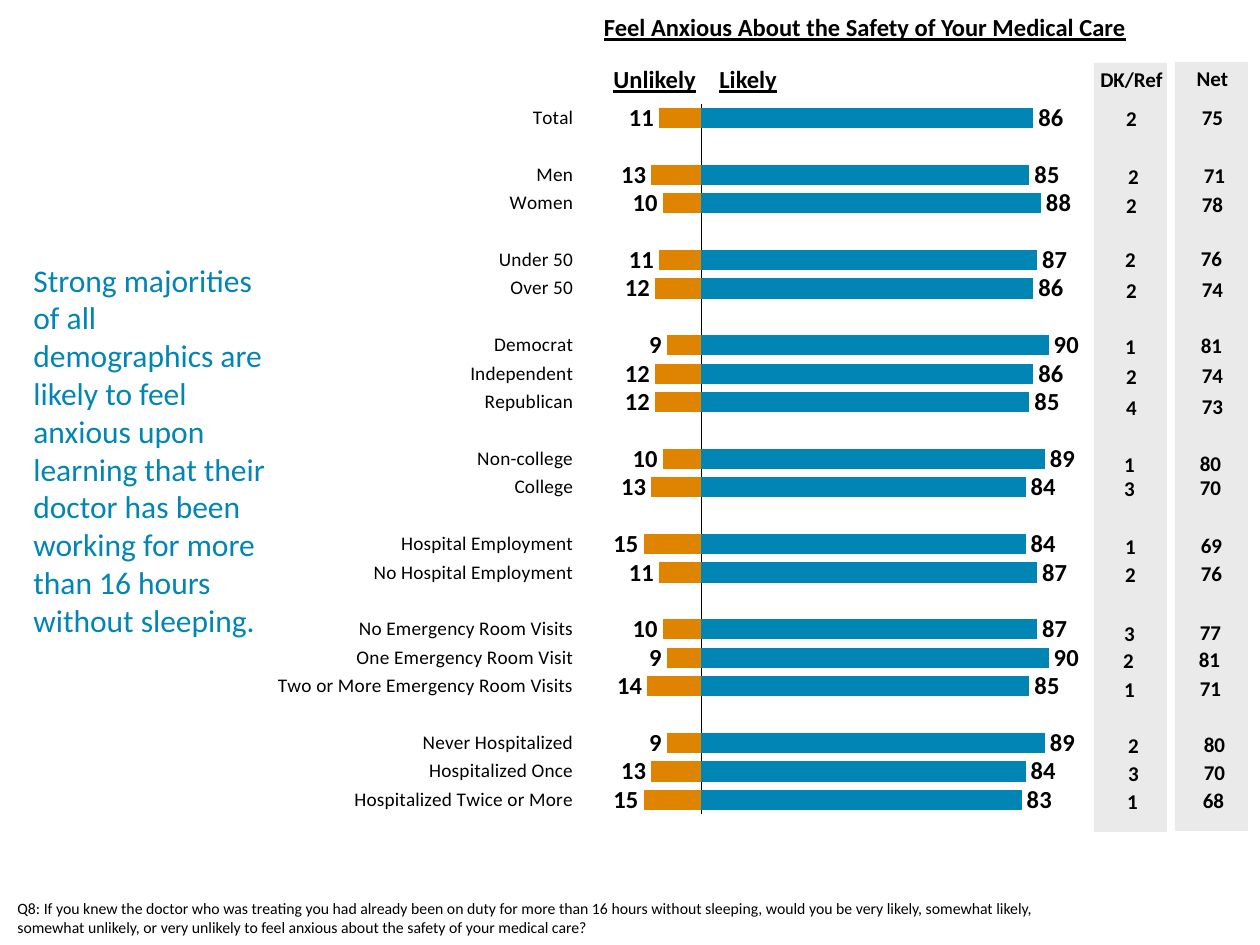
from copy import deepcopy

from lxml import etree
from pptx import Presentation
from pptx.chart.data import CategoryChartData
from pptx.dml.color import RGBColor
from pptx.enum.chart import XL_CHART_TYPE, XL_LABEL_POSITION, XL_TICK_LABEL_POSITION, XL_TICK_MARK
from pptx.enum.shapes import MSO_SHAPE
from pptx.enum.text import MSO_ANCHOR, MSO_AUTO_SIZE, PP_ALIGN
from pptx.oxml.ns import qn
from pptx.util import Pt

BAR = XL_CHART_TYPE.BAR_CLUSTERED
OUTSIDE = XL_LABEL_POSITION.OUTSIDE_END
LOW = XL_TICK_LABEL_POSITION.LOW
NO_TICK = XL_TICK_MARK.NONE
RECT = MSO_SHAPE.RECTANGLE
TOP, MIDDLE = MSO_ANCHOR.TOP, MSO_ANCHOR.MIDDLE
FIT_SHAPE = MSO_AUTO_SIZE.SHAPE_TO_FIT_TEXT
LEFT, CENTER = PP_ALIGN.LEFT, PP_ALIGN.CENTER

BLACK = RGBColor(0x00, 0x00, 0x00)
BLUE = RGBColor(0x00, 0x85, 0xB4)
ORANGE = RGBColor(0xDE, 0x84, 0x00)
GRAY = RGBColor(0xEA, 0xEA, 0xEA)
FONT = "Calibri"
EMU_PER_PX = 914400 / 126

FIELDS = ("label", "unlikely", "likely", "dk_ref", "net", "shift", "top")
GROUPS = [
    [("Total", 11, 86, 2, 75, 0, 106)],
    [("Men", 13, 85, 2, 71, 2, 164),
     ("Women", 10, 88, 2, 78, 0, 193)],
    [("Under 50", 11, 87, 2, 76, -1, 247),
     ("Over 50", 12, 86, 2, 74, 0, 278)],
    [("Democrat", 9, 90, 1, 81, -1, 334),
     ("Independent", 12, 86, 2, 74, 0, 364),
     ("Republican", 12, 85, 4, 73, 0, 395)],
    [("Non-college", 10, 89, 1, 80, -2, 452),
     ("College", 13, 84, 3, 70, -2, 476)],
    [("Hospital Employment", 15, 84, 1, 69, -1, 534),
     ("No Hospital Employment", 11, 87, 2, 76, -1, 562)],
    [("No Emergency Room Visits", 10, 87, 3, 77, -2, 621),
     ("One Emergency Room Visit", 9, 90, 2, 81, -3, 648),
     ("Two or More Emergency Room Visits", 14, 85, 1, 71, -2, 677)],
    [("Never Hospitalized", 9, 89, 2, 80, 2, 733),
     ("Hospitalized Once", 13, 84, 3, 70, 2, 761),
     ("Hospitalized Twice or More", 15, 83, 1, 68, 1, 789)],
]
TAKEAWAY = ("Strong majorities of all demographics are likely to feel anxious upon learning "
            "that their doctor has been working for more than 16 hours without sleeping.")
QUESTION = ("Q8: If you knew the doctor who was treating you had already been on duty for more "
            "than 16 hours without sleeping, would you be very likely, somewhat likely, somewhat "
            "unlikely, or very unlikely to feel anxious about the safety of your medical care?")


def px(n):
    return round(n * EMU_PER_PX)


def box(*lengths):
    return [px(n) for n in lengths]


def style_font(font, size, color=BLACK, bold=False):
    font.name = FONT
    font.size = Pt(size)
    font.bold = bold
    font.color.rgb = color


def add_text(slide, text, at, size, color=BLACK, bold=False, underline=False,
             align=LEFT, anchor=TOP, inset=True):
    tf = slide.shapes.add_textbox(*box(*at)).text_frame
    tf.word_wrap = True
    tf.vertical_anchor = anchor
    if anchor == TOP:
        tf.auto_size = FIT_SHAPE
    if not inset:
        tf.margin_left = tf.margin_right = tf.margin_top = tf.margin_bottom = 0
    tf.text = text
    p = tf.paragraphs[0]
    p.alignment = align
    font = p.runs[0].font
    style_font(font, size, color, bold)
    if underline:
        font.underline = True


def add_column(slide, left, top, heading, field):
    sp = slide.shapes.add_shape(RECT, *box(left, top, 73, 769))
    sp.shadow.inherit = False
    sp.fill.solid()
    sp.fill.fore_color.rgb = GRAY
    sp.line.fill.background()
    figures = [(heading, 0, 67)]
    for group in GROUPS:
        for values in group:
            row = dict(zip(FIELDS, values))
            figures.append((str(row[field]), row["shift"], row["top"]))
    for text, shift, y in figures:
        add_text(slide, text, (left + 1 + shift, top + y - 63, 73, 25), 12, bold=True,
                 align=CENTER, inset=False)


def set_plot_layout(chart, x, y, w, h):
    plot_area = chart._chartSpace.chart.plotArea
    for old in plot_area.findall(qn("c:layout")):
        plot_area.remove(old)
    layout = etree.Element(qn("c:layout"))
    manual = etree.SubElement(layout, qn("c:manualLayout"))
    settings = [("layoutTarget", "inner"), ("xMode", "edge"), ("yMode", "edge"),
                ("x", x), ("y", y), ("w", w), ("h", h)]
    for tag, val in settings:
        etree.SubElement(manual, qn(f"c:{tag}")).set("val", str(val))
    plot_area.insert(0, layout)


def style_series(series, color, number_format):
    series.invert_if_negative = False
    series.format.fill.solid()
    series.format.fill.fore_color.rgb = color
    labels = series.data_labels
    labels.show_value = True
    labels.position = OUTSIDE
    labels.number_format = number_format
    labels.number_format_is_linked = False
    style_font(labels.font, 14, bold=True)


def move_to_second_axis(chart):
    plot_area = chart._chartSpace.chart.plotArea
    bars = plot_area.find(qn("c:barChart"))
    cat_axis = plot_area.find(qn("c:catAx"))
    val_axis = plot_area.find(qn("c:valAx"))
    second = [deepcopy(el) for el in (bars, cat_axis, val_axis)]
    ids = {axis.find(qn("c:axId")).get("val"): new
           for axis, new in ((cat_axis, "50010"), (val_axis, "50020"))}
    for el in second:
        for ref in list(el.iter(qn("c:axId"), qn("c:crossAx"))):
            ref.set("val", ids[ref.get("val")])
    second[1].find(qn("c:delete")).set("val", "1")
    bars.remove(bars.findall(qn("c:ser"))[1])
    second[0].remove(second[0].findall(qn("c:ser"))[0])
    bars.addnext(second[0])
    val_axis.addnext(second[1])
    second[1].addnext(second[2])


def add_bars(slide):
    data = CategoryChartData()
    unlikely, likely = [], []
    for i, group in enumerate(GROUPS):
        if i:
            data.add_category("")
            unlikely.append(None)
            likely.append(None)
        for label, no, yes, *_ in group:
            data.add_category(label)
            unlikely.append(-no)
            likely.append(yes)
    data.add_series("Series 1", unlikely)
    data.add_series("Series 2", likely)
    chart = slide.shapes.add_chart(BAR, *box(210, 31, 882, 800), data).chart
    chart.has_legend = False
    chart.has_title = False
    style_font(chart.font, 11)
    set_plot_layout(chart, 0.426, 0.091, 0.547, 0.888)

    plot = chart.plots[0]
    plot.gap_width = 40
    plot.overlap = 100
    plot.vary_by_categories = False
    style_series(plot.series[0], ORANGE, "#,##0_);[Black]General")
    style_series(plot.series[1], BLUE, "General")

    axis = chart.category_axis
    axis.reverse_order = True
    axis.tick_label_position = LOW
    axis.major_tick_mark = NO_TICK
    axis.minor_tick_mark = NO_TICK
    axis.format.line.color.rgb = BLACK
    axis.format.line.width = Pt(0.29)
    style_font(axis.tick_labels.font, 11)

    axis = chart.value_axis
    axis.minimum_scale = -30
    axis.maximum_scale = 95
    axis.has_major_gridlines = False
    axis.visible = False
    move_to_second_axis(chart)


def main():
    prs = Presentation()
    prs.slide_width, prs.slide_height = box(1260, 945)
    slide = prs.slides.add_slide(prs.slide_layouts[6])

    add_text(slide, TAKEAWAY, (21, 42, 272, 815), 18, BLUE, anchor=MIDDLE)
    add_bars(slide)
    add_column(slide, 1094, 63, "DK/Ref", "dk_ref")
    add_column(slide, 1175, 62, "Net", "net")

    add_text(slide, "Feel Anxious About the Safety of Your Medical Care", (386, 6, 958, 43),
             14, bold=True, underline=True, align=CENTER)
    for text, left in [("Unlikely", 601), ("Likely", 707)]:
        add_text(slide, text, (left, 58, 118, 43), 14, bold=True, underline=True)
    add_text(slide, QUESTION, (5, 893, 1092, 50), 9)
    prs.save("out.pptx")


if __name__ == "__main__":
    main()
